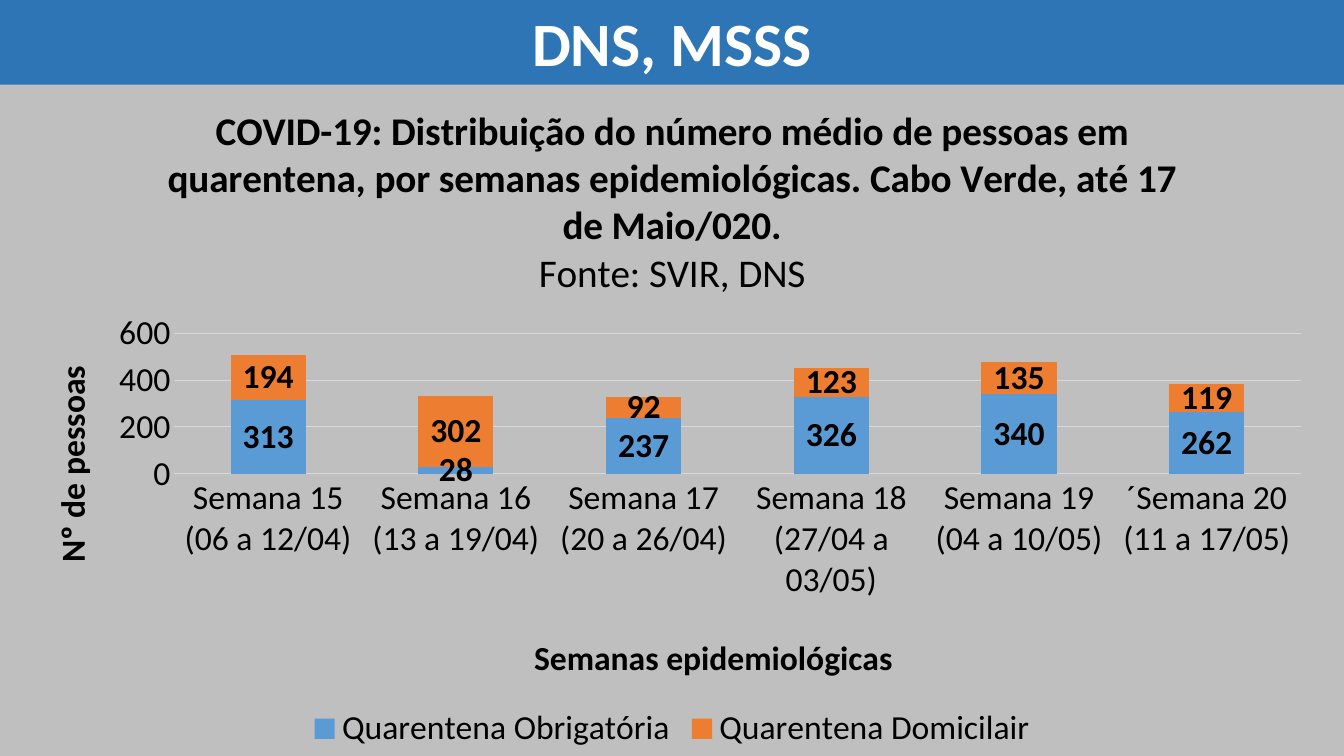
from dataclasses import dataclass

from lxml import etree
from pptx import Presentation
from pptx.chart.data import CategoryChartData
from pptx.dml.color import RGBColor
from pptx.enum.chart import (XL_CHART_TYPE, XL_LABEL_POSITION,
                             XL_LEGEND_POSITION, XL_TICK_MARK)
from pptx.enum.text import MSO_ANCHOR, MSO_AUTO_SIZE, PP_ALIGN
from pptx.oxml.ns import qn
from pptx.util import Inches, Pt

STACKED = XL_CHART_TYPE.COLUMN_STACKED
CENTER = XL_LABEL_POSITION.CENTER
BOTTOM = XL_LEGEND_POSITION.BOTTOM
NO_TICK = XL_TICK_MARK.NONE

GRAY = RGBColor(0xBF, 0xBF, 0xBF)
NAVY = RGBColor(0x2E, 0x75, 0xB6)
BLUE = RGBColor(0x5B, 0x9B, 0xD5)
ORANGE = RGBColor(0xED, 0x7D, 0x31)
PALE = RGBColor(0xD9, 0xD9, 0xD9)
BLACK = RGBColor(0, 0, 0)
WHITE = RGBColor(0xFF, 0xFF, 0xFF)

FACE = "Calibri"
WIDE, HIGH = Inches(13.33), Inches(7.5)
BAND = int(HIGH * 0.112)
EDGE = Inches(0.17)


@dataclass
class Group:
    name: str
    values: tuple[int, ...]
    color: RGBColor


@dataclass
class Line:
    text: str
    size: int
    bold: bool = True


WEEKS = ("Semana 15 (06 a 12/04)", "Semana 16 (13 a 19/04)",
         "Semana 17 (20 a 26/04)", "Semana 18 (27/04 a 03/05)",
         "Semana 19 (04 a 10/05)", "´Semana 20 (11 a 17/05)")
GROUPS = (
    Group("Quarentena Obrigatória", (313, 28, 237, 326, 340, 262), BLUE),
    Group("Quarentena Domicilair", (194, 302, 92, 123, 135, 119), ORANGE),
)
HEADING = (
    Line("COVID-19: Distribuição do número médio de pessoas em quarentena, "
         "por semanas epidemiológicas. Cabo Verde, até 17 de Maio/020.", 28),
    Line("Fonte: SVIR, DNS", 28, False),
)


def style(font, size: int, bold: bool = False, color: RGBColor = BLACK) -> None:
    font.name, font.size, font.bold = FACE, Pt(size), bold
    font.color.rgb = color


def write(title, lines: tuple[Line, ...]) -> None:
    frame = title.text_frame
    frame.text = "\n".join(line.text for line in lines)
    for para, line in zip(frame.paragraphs, lines):
        style(para.font, line.size, line.bold)


def place(node, spot: int, **shares: float) -> None:
    """Fix a chart part at shares of the chart's size, as child number spot."""
    for old in node.findall(qn("c:layout")):
        node.remove(old)
    layout = etree.Element(qn("c:layout"))
    manual = etree.SubElement(layout, qn("c:manualLayout"))
    if "w" in shares:
        etree.SubElement(manual, qn("c:layoutTarget")).set("val", "inner")
    for key in ("x", "y"):
        etree.SubElement(manual, qn(f"c:{key}Mode")).set("val", "edge")
    for key, share in shares.items():
        etree.SubElement(manual, qn(f"c:{key}")).set("val", str(share))
    node.insert(spot, layout)


def label(axis, text: str, x: float, y: float, turn: int = 0) -> None:
    """Title an axis, turned by some degrees, and style its ticks."""
    title = axis.axis_title
    write(title, (Line(text, 24),))
    title.text_frame._txBody.bodyPr.set("rot", str(turn * 60000))
    place(title._element, 1, x=x, y=y)
    axis.major_tick_mark = axis.minor_tick_mark = NO_TICK
    style(axis.tick_labels.font, 24)


def add_band(slide) -> None:
    band = slide.shapes.title
    band.left, band.top, band.width, band.height = 0, 0, WIDE, BAND
    band.fill.solid()
    band.fill.fore_color.rgb = NAVY
    frame = band.text_frame
    frame.text = "DNS, MSSS"
    frame.auto_size = MSO_AUTO_SIZE.NONE
    frame.vertical_anchor = MSO_ANCHOR.MIDDLE
    frame.margin_top = frame.margin_bottom = 0
    para = frame.paragraphs[0]
    para.alignment = PP_ALIGN.CENTER
    style(para.font, 44, True, WHITE)


def add_bars(slide) -> None:
    data = CategoryChartData()
    data.categories = WEEKS
    for group in GROUPS:
        data.add_series(group.name, group.values)
    chart = slide.shapes.add_chart(STACKED, EDGE, BAND, WIDE - 2 * EDGE,
                                   HIGH - BAND, data).chart
    style(chart.font, 24)
    write(chart.chart_title, HEADING)
    chart.chart_title.include_in_layout = False

    plot = chart.plots[0]
    plot.gap_width, plot.overlap, plot.vary_by_categories = 150, 100, False
    for bars, group in zip(plot.series, GROUPS):
        bars.format.fill.solid()
        bars.format.fill.fore_color.rgb = group.color
        marks = bars.data_labels
        marks.show_value = True
        marks.position = CENTER
        style(marks.font, 24, True)

    weeks, count = chart.category_axis, chart.value_axis
    label(weeks, "Semanas epidemiológicas", 0.39, 0.81)
    weeks.format.line.color.rgb = PALE
    weeks.format.line.width = Pt(0.75)
    label(count, "Nº de pessoas", 0.02, 0.41, -90)
    count.minimum_scale, count.maximum_scale, count.major_unit = 0, 600, 200
    count.format.line.fill.background()
    grid = count.major_gridlines.format.line
    grid.color.rgb, grid.width = PALE, Pt(0.75)

    chart.has_legend = True
    chart.legend.position = BOTTOM
    chart.legend.include_in_layout = False
    style(chart.legend.font, 24)
    area = chart._chartSpace.chart.plotArea
    place(area, 0, x=0.12, y=0.37, w=0.86, h=0.21)


def main() -> None:
    deck = Presentation()
    deck.slide_width, deck.slide_height = WIDE, HIGH
    slide = deck.slides.add_slide(deck.slide_layouts[5])
    slide.background.fill.solid()
    slide.background.fill.fore_color.rgb = GRAY
    add_band(slide)
    add_bars(slide)
    deck.save("out.pptx")


if __name__ == "__main__":
    main()
